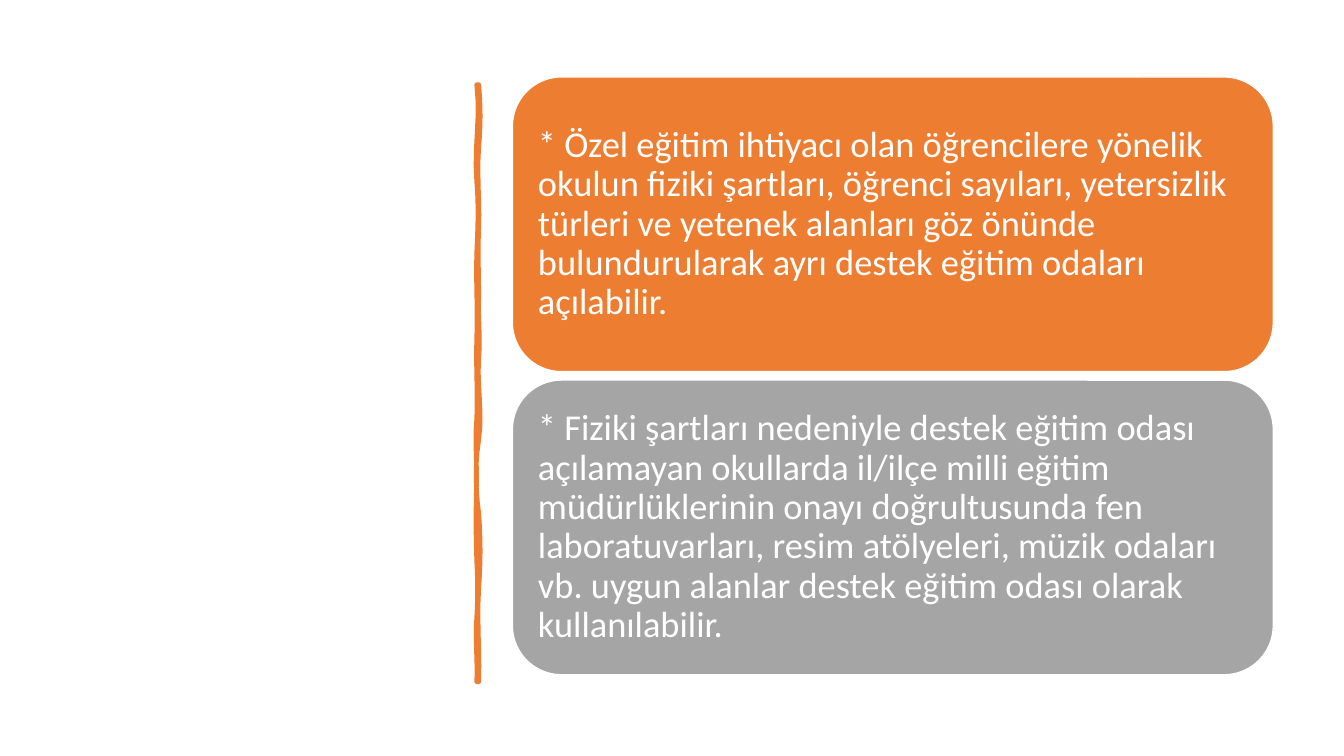
from dataclasses import dataclass

from pptx import Presentation
from pptx.dml import color
from pptx.enum import shapes, text
from pptx.util import Pt


@dataclass(frozen=True)
class Theme:
    orange: str = "ED7D31"
    gray: str = "A5A5A5"
    white: str = "FFFFFF"
    font: str = "Calibri"
    body: float = 26


THEME = Theme()
LEFT, TOP, WIDTH, HEIGHT, GAP = 366, 55, 543.5, 210.5, 6
STROKE_TOP = 60.5
RIGHT_X, LEFT_X = 342, 340.5
RIGHT_EDGE = [
    (105, 343.4, 343.4), (163, 340.6, 342.7), (212, 341.3, 342),
    (256, 341.3, 343.4), (314, 340.6, 344.9), (367, 339.1, 339.8),
    (420, 343.4, 343.4), (487, 340.6, 342.7),
]
LEFT_EDGE = [
    (441, 341.3, 339.1), (401, 341.3, 341.3), (343, 339.8, 339.8),
    (299, 340.6, 339.1), (241, 341.3, 339.8), (180, 341.3, 339.8),
    (130, 341.3, 342), (STROKE_TOP, 338.4, 343.4),
]
RULES = [
    (THEME.orange, "* Özel eğitim ihtiyacı olan öğrencilere yönelik okulun fiziki "
     "şartları, öğrenci sayıları, yetersizlik türleri ve yetenek alanları göz "
     "önünde bulundurularak ayrı destek eğitim odaları açılabilir."),
    (THEME.gray, "* Fiziki şartları nedeniyle destek eğitim odası açılamayan "
     "okullarda il/ilçe milli eğitim müdürlüklerinin onayı doğrultusunda fen "
     "laboratuvarları, resim atölyeleri, müzik odaları vb. uygun alanlar destek "
     "eğitim odası olarak kullanılabilir."),
]


def paint(shape, fill, line, width):
    shape.shadow.inherit = False
    shape.fill.solid()
    shape.fill.fore_color.rgb = color.RGBColor.from_string(fill)
    shape.line.color.rgb = color.RGBColor.from_string(line)
    shape.line.width = Pt(width)


def write(shape, words, size=THEME.body, tint=THEME.white, inset=8, lead=0.9):
    frame = shape.text_frame
    frame.word_wrap = True
    frame.vertical_anchor = text.MSO_ANCHOR.MIDDLE
    frame.margin_left = frame.margin_right = Pt(inset)
    frame.margin_top = frame.margin_bottom = Pt(inset)
    para = frame.paragraphs[0]
    para.alignment = text.PP_ALIGN.LEFT
    para.line_spacing = lead
    run = para.add_run()
    run.text = words
    run.font.name = THEME.font
    run.font.size = Pt(size)
    run.font.color.rgb = color.RGBColor.from_string(tint)


def card(slide, top, fill, words):
    box = slide.shapes.add_shape(
        shapes.MSO_SHAPE.ROUNDED_RECTANGLE,
        Pt(LEFT), Pt(top), Pt(WIDTH), Pt(HEIGHT))
    paint(box, fill, THEME.white, 1)
    write(box, words)


def curve(x, start, edge, steps=6):
    points = []
    for end, near, far in edge:
        for step in range(1, steps + 1):
            t = step / steps
            s = 1 - t
            bend = x * (s ** 3 + t ** 3) + 3 * s * t * (s * near + t * far)
            points.append((Pt(bend), Pt(start + (end - start) * t)))
        start = end
    return points


def stroke(slide):
    foot = RIGHT_EDGE[-1][0]
    points = curve(RIGHT_X, STROKE_TOP, RIGHT_EDGE)
    points.append((Pt(LEFT_X), Pt(foot)))
    points += curve(LEFT_X, foot, LEFT_EDGE)
    pen = slide.shapes.build_freeform(Pt(RIGHT_X), Pt(STROKE_TOP))
    pen.add_line_segments(points, close=True)
    paint(pen.convert_to_shape(), THEME.orange, THEME.orange, 3.25)


def main():
    deck = Presentation()
    deck.slide_width, deck.slide_height = Pt(960), Pt(540)
    slide = deck.slides.add_slide(deck.slide_layouts[6])
    stroke(slide)
    for row, (fill, words) in enumerate(RULES):
        card(slide, TOP + row * (HEIGHT + GAP), fill, words)
    deck.save("out.pptx")


if __name__ == "__main__":
    main()
